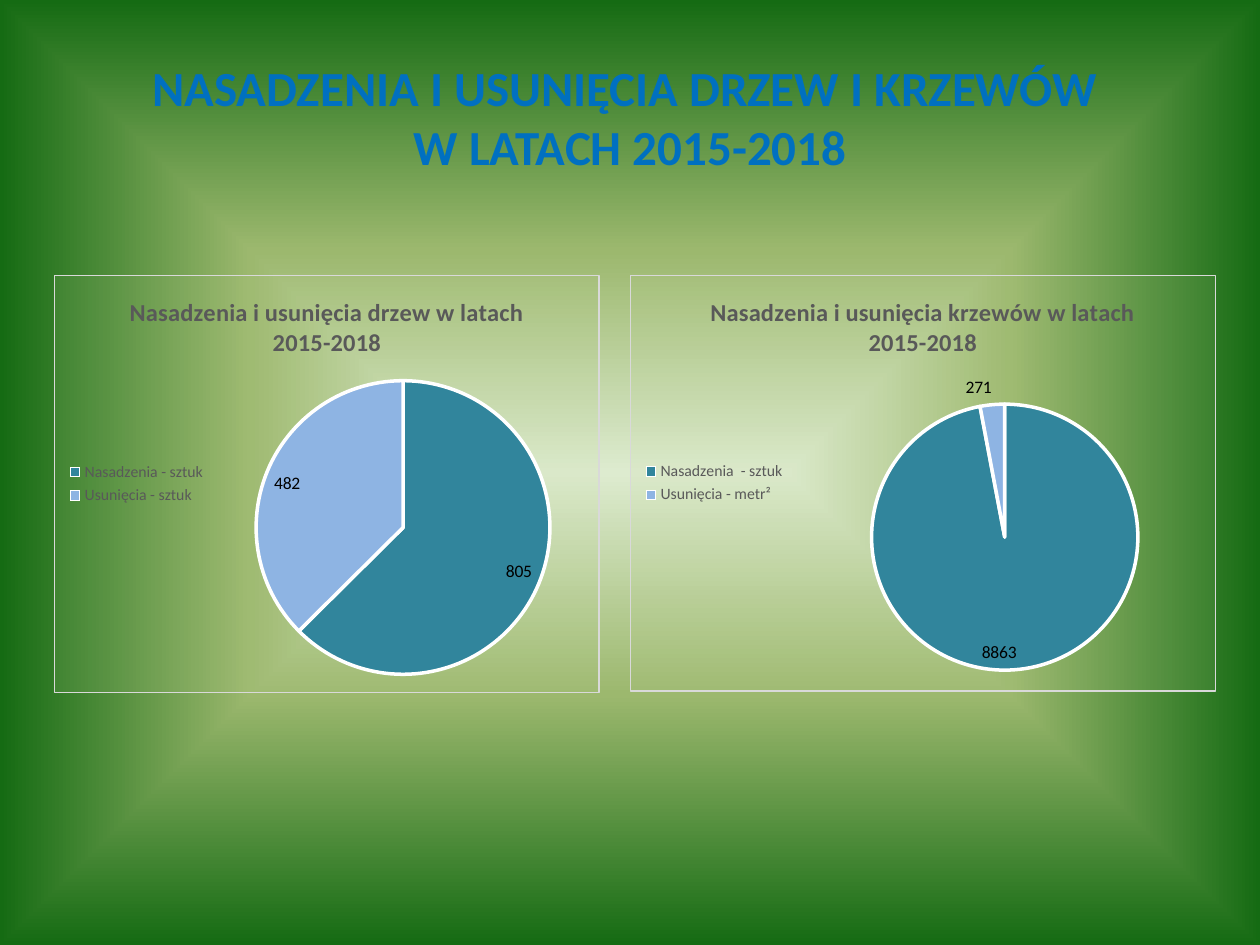
"""Build a slide with two pie charts of trees and shrubs planted and removed."""
from pptx import Presentation
from pptx.chart.data import CategoryChartData
from pptx.dml.color import RGBColor
from pptx.enum.chart import XL_CHART_TYPE, XL_LABEL_POSITION, XL_LEGEND_POSITION
from pptx.enum.text import MSO_ANCHOR, PP_ALIGN
from pptx.oxml import parse_xml
from pptx.oxml.ns import nsdecls, qn
from pptx.util import Inches, Pt

PIE = XL_CHART_TYPE.PIE
LEGEND_LEFT = XL_LEGEND_POSITION.LEFT
INSIDE = XL_LABEL_POSITION.INSIDE_END
OUTSIDE = XL_LABEL_POSITION.OUTSIDE_END
MIDDLE = MSO_ANCHOR.MIDDLE
CENTER = PP_ALIGN.CENTER

FONT = "Calibri"
COLORS = {
    "title": "0070C0", "planted": "31859C", "removed": "8EB4E3",
    "gray": "595959", "label": "000000", "gap": "FFFFFF",
    "panel": "C3D69B", "border": "D9D9D9",
    "center": "DDEBCF", "halfway": "9CB86E", "edge": "156B13",
}
GRADIENT = [(0, "center"), (47, "halfway"), (100, "edge")]
PIES = [
    {
        "title": "Nasadzenia i usunięcia drzew w latach 2015-2018",
        "box": (0.43, 2.18, 4.33, 3.32),
        "plot": {"x": 0.37, "y": 0.25, "w": 0.54, "h": 0.71},
        "categories": ["Nasadzenia - sztuk", "Usunięcia - sztuk"],
        "values": [805, 482],
        "labels": [INSIDE, INSIDE],
    },
    {
        "title": "Nasadzenia i usunięcia krzewów w latach 2015-2018",
        "box": (5, 2.18, 4.65, 3.31),
        "plot": {"x": 0.41, "y": 0.31, "w": 0.46, "h": 0.64},
        "categories": ["Nasadzenia  - sztuk", "Usunięcia - metr²"],
        "values": [8863, 271],
        "labels": [INSIDE, OUTSIDE],
    },
]


def style_font(font, size, color, bold=False):
    font.name = FONT
    font.size = Pt(size)
    font.bold = bold
    font.color.rgb = RGBColor.from_string(COLORS[color])


prs = Presentation()
prs.slide_width, prs.slide_height = Inches(10), Inches(7.5)
slide = prs.slides.add_slide(prs.slide_layouts[5])

stops = "".join(
    f'<a:gs pos="{position * 1000}"><a:srgbClr val="{COLORS[name]}"/></a:gs>'
    for position, name in GRADIENT
)
slide.element.cSld.insert(0, parse_xml(
    f'<p:bg {nsdecls("p", "a")}><p:bgPr><a:gradFill rotWithShape="1">'
    f'<a:gsLst>{stops}</a:gsLst><a:path path="rect">'
    '<a:fillToRect l="50000" t="50000" r="50000" b="50000"/></a:path>'
    '</a:gradFill><a:effectLst/></p:bgPr></p:bg>'
))

heading = slide.shapes.title
heading.left, heading.top = Inches(0.5), Inches(0.3)
heading.width, heading.height = Inches(9), Inches(1.25)
heading.text_frame.vertical_anchor = MIDDLE
heading_line = heading.text_frame.paragraphs[0]
heading_line.text = "NASADZENIA I USUNIĘCIA DRZEW I KRZEWÓW \vW LATACH 2015-2018"
heading_line.alignment = CENTER
for run in heading_line.runs:
    style_font(run.font, 28, "title", bold=True)

for pie in PIES:
    counts = CategoryChartData()
    counts.categories = pie["categories"]
    counts.add_series("Series 1", pie["values"])
    box = [Inches(length) for length in pie["box"]]
    chart = slide.shapes.add_chart(PIE, *box, counts).chart
    style_font(chart.font, 10, "label")

    chart.has_title = True
    caption = chart.chart_title.text_frame.paragraphs[0]
    caption.text = pie["title"]
    style_font(caption.runs[0].font, 14, "gray", bold=True)
    chart.chart_title.include_in_layout = False

    chart.has_legend = True
    chart.legend.position = LEGEND_LEFT
    chart.legend.include_in_layout = False
    style_font(chart.legend.font, 9, "gray")

    plot = chart.plots[0]
    plot.vary_by_categories = True
    for index, color in enumerate(["planted", "removed"]):
        slice_point = plot.series[0].points[index]
        slice_point.format.fill.solid()
        slice_point.format.fill.fore_color.rgb = RGBColor.from_string(COLORS[color])
        slice_point.format.line.color.rgb = RGBColor.from_string(COLORS["gap"])
        slice_point.format.line.width = Pt(2)
        slice_point.data_label.position = pie["labels"][index]
        style_font(slice_point.data_label.font, 10, "label")

    chart_part = chart.element.find(qn("c:chart"))
    plot_area = chart_part.find(qn("c:plotArea"))
    for old_layout in plot_area.findall(qn("c:layout")):
        plot_area.remove(old_layout)
    extents = "".join(f'<c:{key} val="{share}"/>' for key, share in pie["plot"].items())
    plot_area.insert(0, parse_xml(
        f'<c:layout {nsdecls("c")}><c:manualLayout><c:layoutTarget val="inner"/>'
        f'<c:xMode val="edge"/><c:yMode val="edge"/>{extents}'
        '</c:manualLayout></c:layout>'
    ))
    chart_part.addnext(parse_xml(
        f'<c:spPr {nsdecls("c", "a")}><a:solidFill><a:srgbClr val="{COLORS["panel"]}">'
        '<a:alpha val="10000"/></a:srgbClr></a:solidFill>'
        f'<a:ln w="{Pt(0.75)}"><a:solidFill><a:srgbClr val="{COLORS["border"]}"/>'
        '</a:solidFill></a:ln></c:spPr>'
    ))

prs.save("out.pptx")
